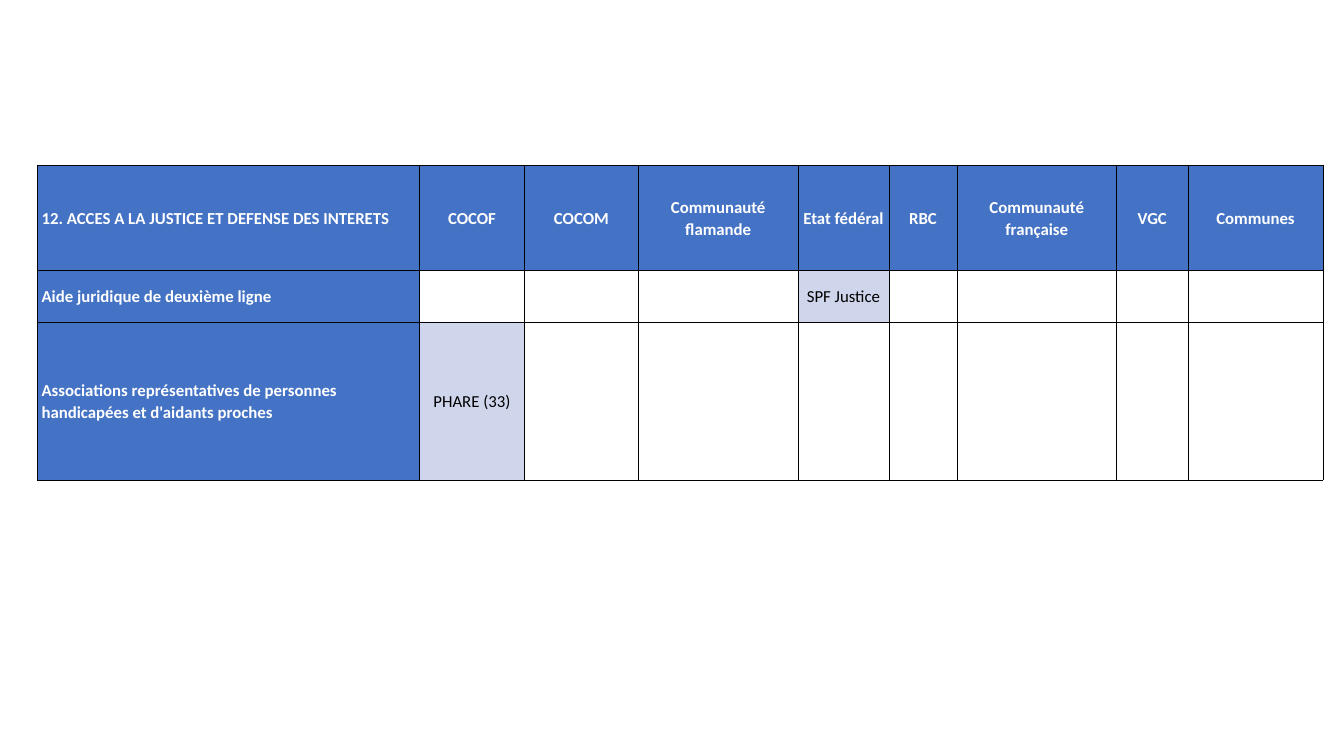
from dataclasses import dataclass

from lxml.etree import SubElement
from pptx import Presentation
from pptx.dml.color import RGBColor
from pptx.enum.text import MSO_ANCHOR as Anchor, PP_ALIGN as Align
from pptx.oxml.ns import qn
from pptx.util import Pt


@dataclass(frozen=True)
class Theme:
    font: str = "Calibri"
    size: int = 12
    heading_fill: str = "4472C4"
    heading_text: str = "FFFFFF"
    service_fill: str = "CFD5EA"
    service_text: str = "000000"
    border: str = "000000"
    border_width: float = 0.5


theme = Theme()


def add_borders(cell):
    properties = cell._tc.get_or_add_tcPr()
    for position, side in enumerate(("a:lnL", "a:lnR", "a:lnT", "a:lnB")):
        line = SubElement(properties, qn(side), w=str(Pt(theme.border_width)))
        fill = SubElement(line, qn("a:solidFill"))
        SubElement(fill, qn("a:srgbClr"), val=theme.border)
        properties.insert(position, line)


authorities = [
    ("COCOF", 75),
    ("COCOM", 81.4),
    ("Communauté flamande", 114),
    ("Etat fédéral", 65),
    ("RBC", 48.6),
    ("Communauté française", 114),
    ("VGC", 51),
    ("Communes", 96.5),
]
topic = "12. ACCES A LA JUSTICE ET DEFENSE DES INTERETS"
topic_width = 272.9
services = [
    ("Aide juridique de deuxième ligne", {"Etat fédéral": "SPF Justice"}),
    ("Associations représentatives de personnes handicapées et d'aidants proches",
     {"COCOF": "PHARE (33)"}),
]
names = [name for name, width in authorities]
widths = [topic_width] + [width for name, width in authorities]
heights = [75, 37.5, 112.5]
rows = [[topic] + names]
for service, providers in services:
    rows.append([service] + [providers.get(name, "") for name in names])

presentation = Presentation()
presentation.slide_width = Pt(960)
presentation.slide_height = Pt(540)
slide = presentation.slides.add_slide(presentation.slide_layouts[6])

competences = slide.shapes.add_table(
    len(rows), len(widths), Pt(26.8), Pt(118), Pt(sum(widths)), Pt(sum(heights))
).table
competences.horz_banding = False
for column, width in zip(competences.columns, widths):
    column.width = Pt(width)

for row_index, (labels, height) in enumerate(zip(rows, heights)):
    competences.rows[row_index].height = Pt(height)
    for column_index, label in enumerate(labels):
        cell = competences.cell(row_index, column_index)
        is_heading = row_index == 0 or column_index == 0
        if label:
            cell.fill.solid()
            cell.fill.fore_color.rgb = RGBColor.from_string(
                theme.heading_fill if is_heading else theme.service_fill)
        else:
            cell.fill.background()
        add_borders(cell)
        cell.vertical_anchor = Anchor.MIDDLE
        cell.margin_left = cell.margin_right = Pt(2.9)
        cell.margin_top = cell.margin_bottom = Pt(0)
        cell.text = label
        paragraph = cell.text_frame.paragraphs[0]
        paragraph.alignment = Align.CENTER if column_index else Align.LEFT
        paragraph.line_spacing = 1.07
        paragraph.font.name = theme.font
        paragraph.font.size = Pt(theme.size)
        paragraph.font.bold = is_heading
        paragraph.font.color.rgb = RGBColor.from_string(
            theme.heading_text if is_heading else theme.service_text)

presentation.save("out.pptx")
